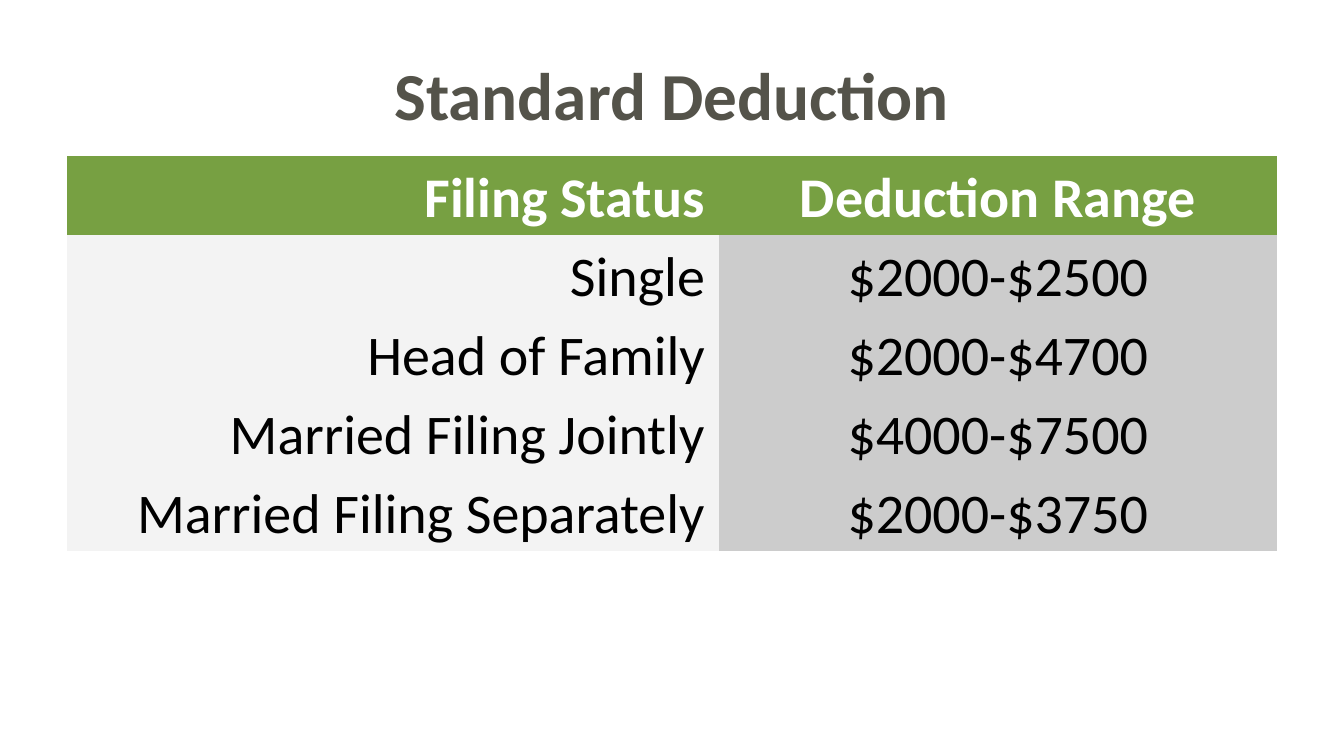
from pptx import Presentation
from pptx.dml.color import RGBColor
from pptx.enum.text import MSO_ANCHOR, PP_ALIGN as Align
from pptx.util import Emu, Pt

PX_PER_INCH = 134.4
EMU_PER_PX = 914400 / PX_PER_INCH
FONT = "Calibri"
OLIVE = RGBColor(0x54, 0x53, 0x4A)
GREEN = RGBColor(0x77, 0xA0, 0x42)
WHITE = RGBColor(0xFF, 0xFF, 0xFF)
BLACK = RGBColor(0x00, 0x00, 0x00)
PALE_GRAY = RGBColor(0xF3, 0xF3, 0xF3)
GRAY = RGBColor(0xCC, 0xCC, 0xCC)

NO_STYLE_NO_GRID = "{2D5ABB26-0587-4C30-8999-92F81FD0307C}"
COLUMN_WIDTHS = (652, 558)
COLUMN_FILLS = (PALE_GRAY, GRAY)
COLUMN_ALIGNMENTS = (Align.RIGHT, Align.CENTER)
ROW_HEIGHT = 79
DEDUCTIONS = (
    ("Filing Status", "Deduction Range"),
    ("Single", "$2000-$2500"),
    ("Head of Family", "$2000-$4700"),
    ("Married Filing Jointly", "$4000-$7500"),
    ("Married Filing Separately", "$2000-$3750"),
)


def px(length):
    return Emu(round(length * EMU_PER_PX))


def set_margins(target, side, top, bottom):
    target.margin_left = target.margin_right = px(side)
    target.margin_top, target.margin_bottom = px(top), px(bottom)


def write_text(text_frame, text, size, color, bold, alignment):
    text_frame.text = text
    text_frame.word_wrap = True
    paragraph = text_frame.paragraphs[0]
    paragraph.alignment = alignment
    font = paragraph.runs[0].font
    font.name, font.size, font.bold = FONT, Pt(size), bold
    font.color.rgb = color
    return paragraph


def add_title(slide, text):
    shape = slide.shapes.add_textbox(px(67), px(31), px(1210), px(126))
    text_frame = shape.text_frame
    text_frame.vertical_anchor = MSO_ANCHOR.MIDDLE
    set_margins(text_frame, 9, 5, 5)
    write_text(text_frame, text, 36, OLIVE, True, Align.CENTER)


def fill_cell(cell, text, fill_color, text_color, bold, alignment):
    cell.fill.solid()
    cell.fill.fore_color.rgb = fill_color
    set_margins(cell, 14, 15, 5)
    paragraph = write_text(cell.text_frame, text, 30, text_color, bold, alignment)
    paragraph.line_spacing = 0.86


def add_deduction_table(slide):
    table = slide.shapes.add_table(
        len(DEDUCTIONS), len(COLUMN_WIDTHS), px(67), px(156),
        px(sum(COLUMN_WIDTHS)), px(ROW_HEIGHT * len(DEDUCTIONS)),
    ).table
    table.horz_banding = False
    table._tbl.tblPr.find("{*}tableStyleId").text = NO_STYLE_NO_GRID
    for column, width in zip(table.columns, COLUMN_WIDTHS):
        column.width = px(width)
    for row_index, texts in enumerate(DEDUCTIONS):
        table.rows[row_index].height = px(ROW_HEIGHT)
        header = row_index == 0
        for column_index, text in enumerate(texts):
            fill_cell(
                table.cell(row_index, column_index), text,
                GREEN if header else COLUMN_FILLS[column_index],
                WHITE if header else BLACK,
                header, COLUMN_ALIGNMENTS[column_index],
            )


def main():
    presentation = Presentation()
    presentation.slide_width, presentation.slide_height = px(1344), px(756)
    slide = presentation.slides.add_slide(presentation.slide_layouts[6])
    add_title(slide, "Standard Deduction")
    add_deduction_table(slide)
    presentation.save("out.pptx")


if __name__ == "__main__":
    main()
